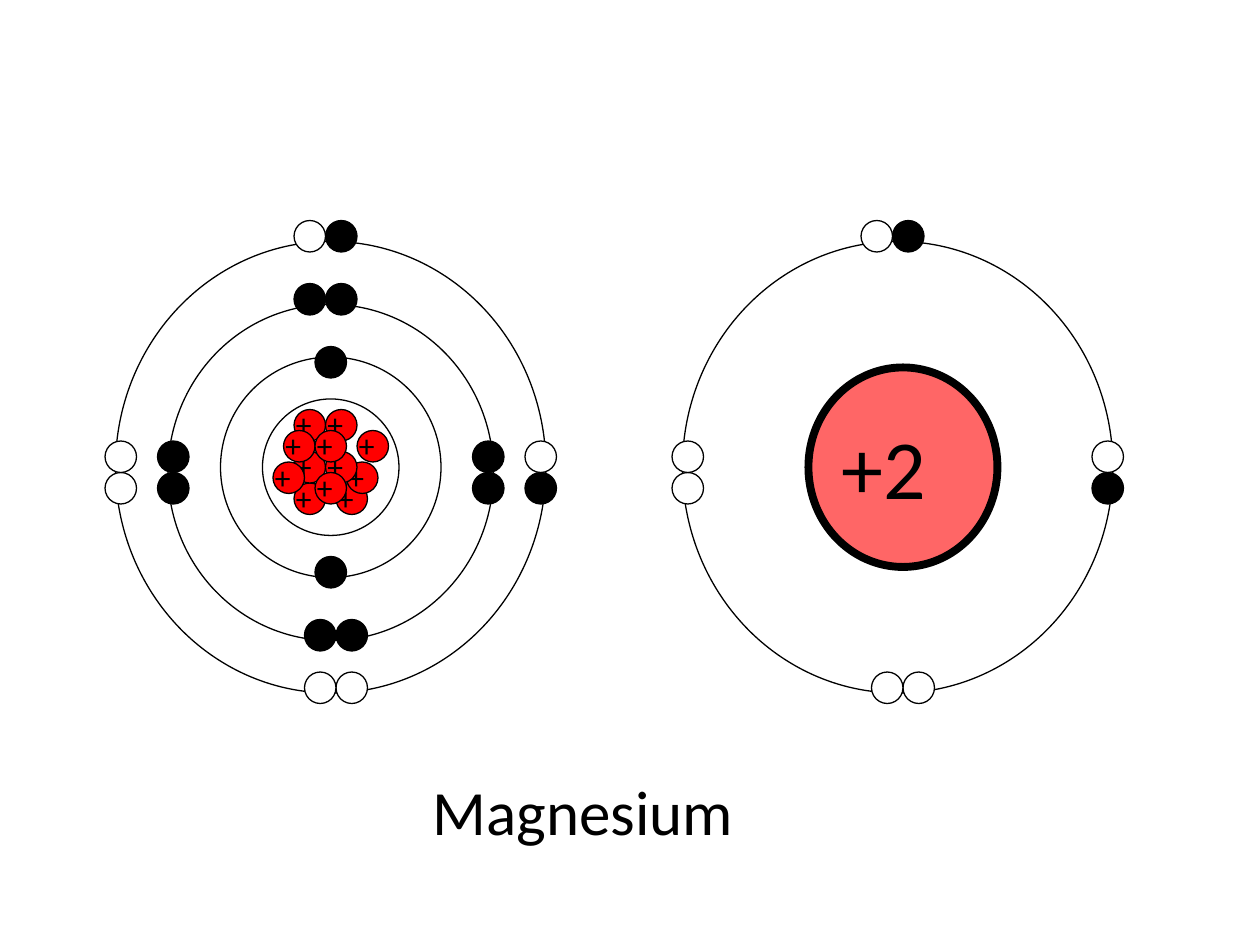
"""Build a slide with a magnesium atom beside its +2 core model."""
import pptx
import pptx.util
import pptx.dml.color
import pptx.enum.shapes
import pptx.enum.text
import pptx.oxml
import pptx.oxml.ns

THEME = {
    "font": "Calibri", "ink": "000000", "open": "FFFFFF", "proton": "FF0000",
    "thin": 0.75, "thick": 4.5, "title": 36, "core": 48, "plus": 18, "core_alpha": 60,
}
UNITS_PER_INCH = 12
DOT = 3
ION_SHIFT = 54

TITLE = ("Magnesium", (40, 73, 34, 8.4))
CORE = ("+2", (77, 35, 18, 19), (79, 39, 20, 10.8))
NUCLEUS = (25, 38, 13, 13)
OUTER_SHELL = {
    "ring": (11, 23, 41, 43),
    "filled": [(31, 21), (50, 45)],
    "open": [(50, 42), (32, 64), (29, 64), (10, 45), (10, 42), (28, 21)],
}
INNER_SHELLS = [
    {"ring": (21, 34, 21, 21), "filled": [(30, 33), (30, 53)], "open": []},
    {"ring": (16, 29, 31, 32), "open": [],
     "filled": [(28, 27), (31, 27), (45, 42), (45, 45),
                (32, 59), (29, 59), (15, 42), (15, 45)]},
]
PROTONS = [(32, 46), (28, 46), (34, 41), (28, 39), (28, 43), (33, 44),
           (31, 43), (31, 39), (27, 41), (26, 44), (30, 45), (30, 41)]


def grid(box):
    return [pptx.util.Inches(v / UNITS_PER_INCH) for v in box]


def rgb(color):
    return pptx.dml.color.RGBColor.from_string(color)


def write(sp, text, size, color=THEME["ink"], font=THEME["font"]):
    tf = sp.text_frame
    tf.word_wrap = True
    tf.vertical_anchor = pptx.enum.text.MSO_ANCHOR.TOP
    p = tf.paragraphs[0]
    p.alignment = pptx.enum.text.PP_ALIGN.LEFT
    r = p.add_run()
    r.text = text
    r.font.size = pptx.util.Pt(size)
    r.font.name = font
    r.font.color.rgb = rgb(color)


def add_label(slide, box, text, size):
    write(slide.shapes.add_textbox(*grid(box)), text, size)


def add_circle(slide, box, fill=None, width=THEME["thin"], alpha=None):
    sp = slide.shapes.add_shape(pptx.enum.shapes.MSO_SHAPE.OVAL, *grid(box))
    sp.shadow.inherit = False
    sp.line.color.rgb = rgb(THEME["ink"])
    sp.line.width = pptx.util.Pt(width)
    if fill is None:
        sp.fill.background()
        return
    sp.fill.solid()
    sp.fill.fore_color.rgb = rgb(fill)
    if alpha is not None:
        clr = sp._element.spPr.find(".//" + pptx.oxml.ns.qn("a:srgbClr"))
        clr.append(pptx.oxml.parse_xml(
            f'<a:alpha {pptx.oxml.ns.nsdecls("a")} val="{alpha * 1000}"/>'))


def add_shell(slide, shell, shift=0):
    x, y, w, h = shell["ring"]
    add_circle(slide, (x + shift, y, w, h))
    for kind, color in (("filled", THEME["ink"]), ("open", THEME["open"])):
        for x, y in shell[kind]:
            add_circle(slide, (x + shift, y, DOT, DOT), color)


def add_proton(slide, x, y):
    add_circle(slide, (x, y, DOT, DOT), THEME["proton"])
    add_label(slide, (x - 1, y - 1, DOT, 4.8), "+", THEME["plus"])


def main():
    prs = pptx.Presentation()
    prs.slide_width = pptx.util.Inches(10)
    prs.slide_height = pptx.util.Inches(7.5)
    slide = prs.slides.add_slide(prs.slide_layouts[5])

    text, box = TITLE
    title = slide.shapes.title
    title.left, title.top, title.width, title.height = grid(box)
    write(title, text, THEME["title"])

    add_shell(slide, OUTER_SHELL, ION_SHIFT)
    text, circle, label = CORE
    add_circle(slide, circle, THEME["proton"], THEME["thick"], THEME["core_alpha"])
    add_label(slide, label, text, THEME["core"])

    for shell in INNER_SHELLS + [OUTER_SHELL]:
        add_shell(slide, shell)
    add_circle(slide, NUCLEUS)
    for x, y in PROTONS:
        add_proton(slide, x, y)

    prs.save("out.pptx")


if __name__ == "__main__":
    main()
